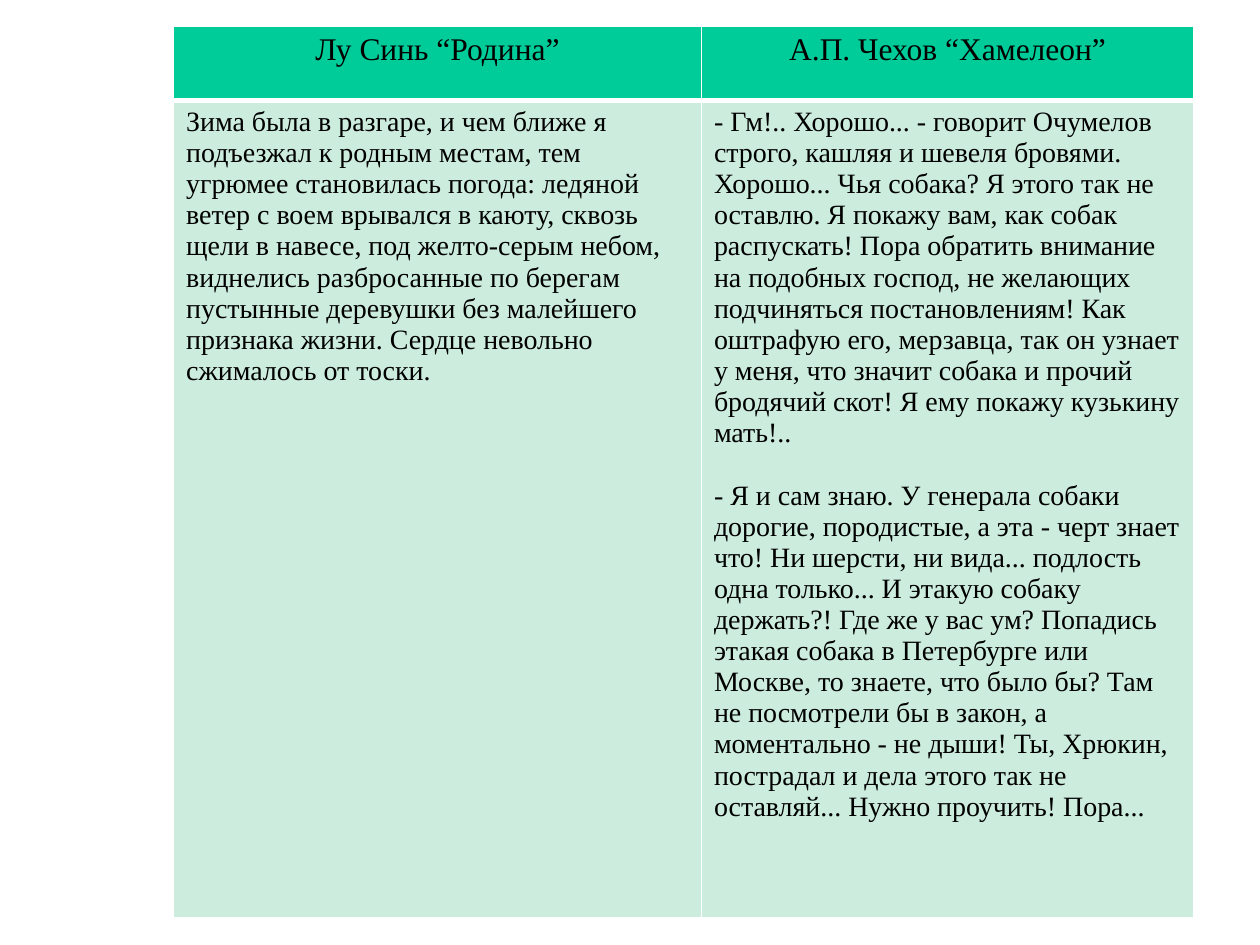
from dataclasses import dataclass

from lxml.etree import SubElement
from pptx import Presentation
from pptx.dml.color import RGBColor
from pptx.enum.text import PP_ALIGN
from pptx.oxml.ns import qn
from pptx.util import Cm, Pt


@dataclass(frozen=True)
class Theme:
    """Colours, font and sizes shared by the slide."""
    font: str = "Times New Roman"
    ink: str = "000000"
    rule: str = "FFFFFF"
    heading_fill: str = "00CC99"
    excerpt_fill: str = "CCECDE"
    heading_size: int = 18
    excerpt_size: int = 16
    paragraph_gap: int = 18
    thin: int = 1
    thick: int = 3


THEME = Theme()

LU_XUN = (
    "Лу Синь “Родина”",
    [
        "Зима была в разгаре, и чем ближе я подъезжал к родным местам, тем "
        "угрюмее становилась погода: ледяной ветер с воем врывался в каюту, "
        "сквозь щели в навесе, под желто-серым небом, виднелись разбросанные "
        "по берегам пустынные деревушки без малейшего признака жизни. Сердце "
        "невольно сжималось от тоски.",
    ],
)
CHEKHOV = (
    "А.П. Чехов “Хамелеон”",
    [
        "- Гм!.. Хорошо... - говорит Очумелов строго, кашляя и шевеля бровями. "
        "Хорошо... Чья собака? Я этого так не оставлю. Я покажу вам, как собак "
        "распускать! Пора обратить внимание на подобных господ, не желающих "
        "подчиняться постановлениям! Как оштрафую его, мерзавца, так он узнает "
        "у меня, что значит собака и прочий бродячий скот! Я ему покажу "
        "кузькину мать!..",
        "- Я и сам знаю. У генерала собаки дорогие, породистые, а эта - черт "
        "знает что! Ни шерсти, ни вида... подлость одна только... И этакую "
        "собаку держать?! Где же у вас ум? Попадись этакая собака в Петербурге "
        "или Москве, то знаете, что было бы? Там не посмотрели бы в закон, а "
        "моментально - не дыши! Ты, Хрюкин, пострадал и дела этого так не "
        "оставляй... Нужно проучить! Пора...",
    ],
)


def write_text(frame, paragraphs, *, size, align=PP_ALIGN.LEFT, gap=0):
    """Fill a text frame with paragraphs in one format."""
    for index, wording in enumerate(paragraphs):
        paragraph = frame.add_paragraph() if index else frame.paragraphs[0]
        paragraph.alignment = align
        if index:
            paragraph.space_before = Pt(gap)
        run = paragraph.add_run()
        run.text = wording
        run.font.name = THEME.font
        run.font.size = Pt(size)
        run.font.bold = False
        run.font.color.rgb = RGBColor.from_string(THEME.ink)


def paint_cell(cell, fill, *, top, bottom):
    """Give a cell its borders and fill."""
    properties = cell._tc.get_or_add_tcPr()
    widths = {"lnL": THEME.thin, "lnR": THEME.thin, "lnT": top, "lnB": bottom}
    for side, width in widths.items():
        line = SubElement(properties, qn(f"a:{side}"), w=str(Pt(width)))
        solid = SubElement(line, qn("a:solidFill"))
        SubElement(solid, qn("a:srgbClr"), val=THEME.rule)
    cell.fill.solid()
    cell.fill.fore_color.rgb = RGBColor.from_string(fill)


def add_comparison(slide, works, left, top, widths, heights):
    """Place a table with one column for each work: title above excerpt."""
    table = slide.shapes.add_table(
        len(heights), len(widths), left, top, sum(widths), sum(heights)
    ).table
    for row, height in zip(table.rows, heights):
        row.height = height
    for index, (title, excerpt) in enumerate(works):
        table.columns[index].width = widths[index]
        heading_cell, excerpt_cell = table.cell(0, index), table.cell(1, index)
        paint_cell(heading_cell, THEME.heading_fill, top=THEME.thin, bottom=THEME.thick)
        paint_cell(excerpt_cell, THEME.excerpt_fill, top=THEME.thick, bottom=THEME.thin)
        write_text(heading_cell.text_frame, [title],
                   size=THEME.heading_size, align=PP_ALIGN.CENTER)
        write_text(excerpt_cell.text_frame, excerpt,
                   size=THEME.excerpt_size, gap=THEME.paragraph_gap)


def main():
    """Build and save the presentation."""
    presentation = Presentation()
    presentation.slide_width, presentation.slide_height = Cm(25.4), Cm(19.05)
    slide = presentation.slides.add_slide(presentation.slide_layouts[6])
    add_comparison(slide, [LU_XUN, CHEKHOV], Cm(3.5), Cm(0.52),
                   [Cm(10.64), Cm(9.93)], [Cm(1.5), Cm(16.48)])
    presentation.save("out.pptx")


if __name__ == "__main__":
    main()
